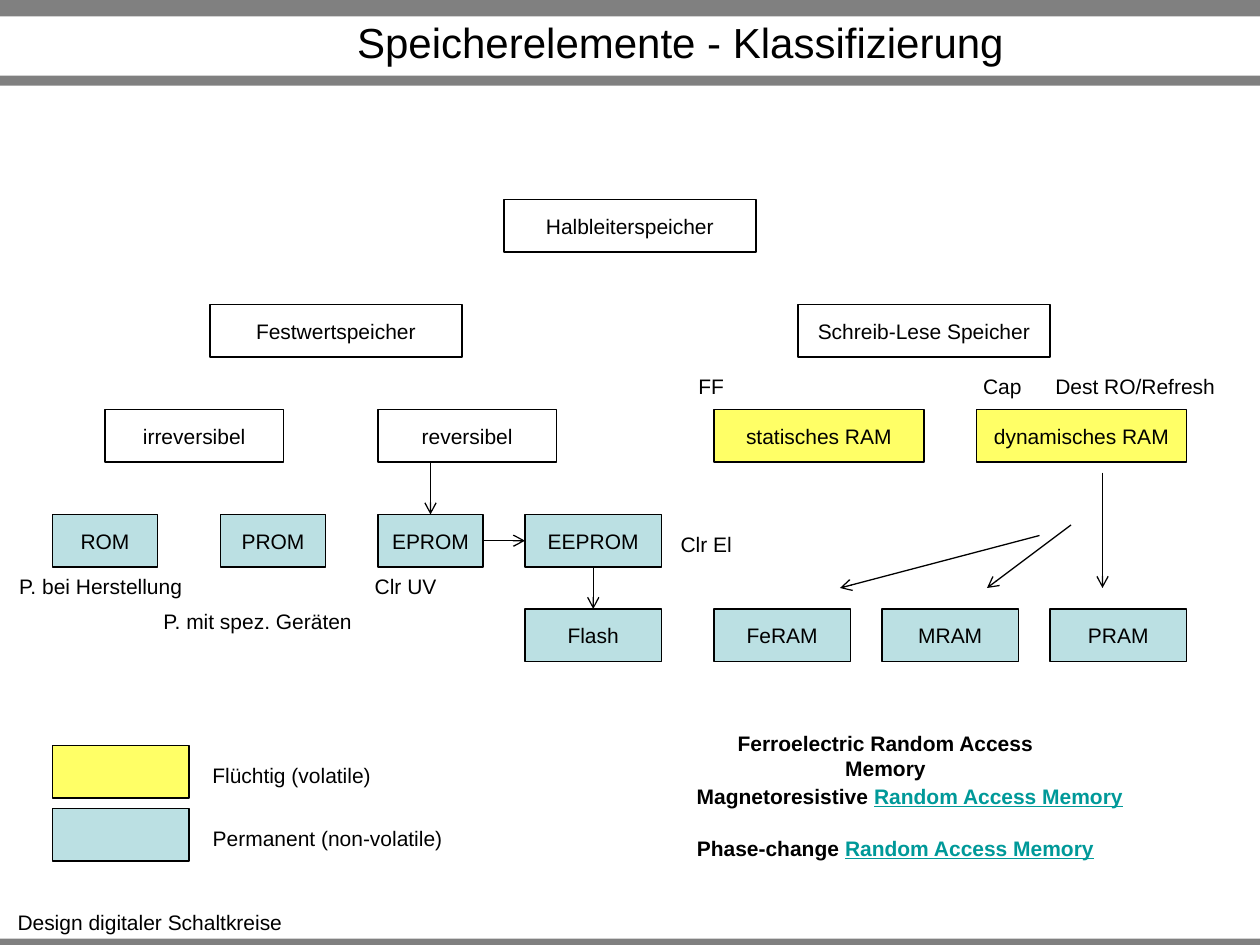
from lxml.etree import SubElement
from pptx import Presentation
from pptx.dml.color import RGBColor
from pptx.enum.shapes import MSO_CONNECTOR, MSO_SHAPE
from pptx.enum.text import MSO_ANCHOR, PP_ALIGN
from pptx.oxml.ns import qn
from pptx.util import Pt

THEME = {
    "font": "Arial", "title": 24, "body": 12, "line": 0.75,
    "black": "000000", "white": "FFFFFF", "bar": "808080", "accent": "009999",
    "volatile": "FFFF66", "permanent": "BBE0E3",
}
SLIDE_W, SLIDE_H = 720, 540
BOX_H, LABEL_H = 30, 21.6

# Content
TITLE = "Speicherelemente - Klassifizierung"
BARS = [(0, 9.36), (43.2, 5.76), (536.4, 5.76)]  # top, height

# Tree rows: top -> (text, left, width, fill)
ROWS = {
    114: [("Halbleiterspeicher", 288, 144, None)],
    174: [("Festwertspeicher", 120, 144, None),
          ("Schreib-Lese Speicher", 456, 144, None)],
    234: [("irreversibel", 60, 102, "white"), ("reversibel", 216, 102, "white"),
          ("statisches RAM", 408, 120, "volatile"),
          ("dynamisches RAM", 558, 120, "volatile")],
    294: [("ROM", 30, 60, "permanent"), ("PROM", 126, 60, "permanent"),
          ("EPROM", 216, 60, "permanent"), ("EEPROM", 300, 78, "permanent")],
    348: [("Flash", 300, 78, "permanent"), ("FeRAM", 408, 78, "permanent"),
          ("MRAM", 504, 78, "permanent"), ("PRAM", 600, 78, "permanent")],
}

# Side of one box to side of another (0 top, 1 left, 2 bottom, 3 right)
LINKS = [("EPROM", 3, "EEPROM", 1), ("EEPROM", 2, "Flash", 0)]
# Start, end, box whose top is reached
FREE_ARROWS = [
    ((246, 264), (246, 294), "EPROM"),
    ((630, 270), (630, 336), None),
    ((612, 300), (564, 336), None),
    ((594, 306), (480, 336), None),
]

# Text, left, top, width
LABELS = [
    ("FF", 391.7, 210, 29.5),
    ("Cap", 554.4, 210, 36.7),
    ("Dest RO/Refresh", 595.4, 210, 106.6),
    ("Clr El", 381.6, 300, 43.9),
    ("Clr UV", 206.6, 324, 50.4),
    ("P. bei Herstellung", 3.6, 324, 108),
    ("P. mit spez. Geräten", 85.7, 344.2, 123.1),
    ("Design digitaler Schaltkreise", 2.2, 516.2, 167),
]
LEGEND = [("Flüchtig (volatile)", "volatile", 105.8),
          ("Permanent (non-volatile)", "permanent", 146.9)]
# Plain part, underlined part, width
GLOSSARY = [("Ferroelectric Random Access Memory", "", 232),
            ("Magnetoresistive ", "Random Access Memory", 259.9),
            ("Phase-change ", "Random Access Memory", 243.4)]


def color(key):
    return RGBColor.from_string(THEME[key])


def write(frame, text, *, size="body", ink="black", bold=False,
          underline=False, wrap=True, anchor=MSO_ANCHOR.MIDDLE):
    """Append a formatted run to the first paragraph of the frame."""
    frame.word_wrap = wrap
    frame.vertical_anchor = anchor
    paragraph = frame.paragraphs[0]
    paragraph.alignment = PP_ALIGN.CENTER
    run = paragraph.add_run()
    run.text = text
    font = run.font
    font.name, font.size = THEME["font"], Pt(THEME[size])
    font.bold, font.underline = bold, underline
    font.color.rgb = color(ink)


def add_box(slide, left, top, width, height, fill=None, outlined=True):
    box = slide.shapes.add_shape(
        MSO_SHAPE.RECTANGLE, Pt(left), Pt(top), Pt(width), Pt(height))
    box.shadow.inherit = False
    if fill:
        box.fill.solid()
        box.fill.fore_color.rgb = color(fill)
    else:
        box.fill.background()
    if outlined:
        box.line.color.rgb = color("black")
        box.line.width = Pt(THEME["line"])
    else:
        box.line.fill.background()
    return box


def add_label(slide, text, left, top, width, **style):
    label = slide.shapes.add_textbox(Pt(left), Pt(top), Pt(width), Pt(LABEL_H))
    write(label.text_frame, text, wrap=False, anchor=MSO_ANCHOR.TOP, **style)
    return label


def add_arrow(slide, start=(0, 0), end=(0, 0)):
    arrow = slide.shapes.add_connector(
        MSO_CONNECTOR.STRAIGHT, *(Pt(value) for value in (*start, *end)))
    arrow.line.color.rgb = color("black")
    arrow.line.width = Pt(THEME["line"])
    SubElement(arrow.line._get_or_add_ln(), qn("a:tailEnd"), type="arrow")
    SubElement(arrow._element.spPr, qn("a:effectLst"))
    return arrow


def main():
    deck = Presentation()
    deck.slide_width, deck.slide_height = Pt(SLIDE_W), Pt(SLIDE_H)
    slide = deck.slides.add_slide(deck.slide_layouts[5])

    # Bars and title
    for top, height in BARS:
        add_box(slide, 0, top, SLIDE_W, height, "bar", outlined=False)
    title = slide.shapes.title
    title.left, title.top = Pt(93.6), Pt(10.08)
    title.width, title.height = Pt(590.4), Pt(27.36)
    write(title.text_frame, TITLE, size="title")

    # Classification tree
    boxes = {}
    for top, row in ROWS.items():
        for text, left, width, fill in row:
            boxes[text] = add_box(slide, left, top, width, BOX_H, fill)
            write(boxes[text].text_frame, text)

    # Arrows
    for source, source_side, target, target_side in LINKS:
        arrow = add_arrow(slide)
        arrow.begin_connect(boxes[source], source_side)
        arrow.end_connect(boxes[target], target_side)
    for start, end, target in FREE_ARROWS:
        arrow = add_arrow(slide, start, end)
        if target:
            arrow.end_connect(boxes[target], 0)

    # Notes beside the boxes and footer
    for label in LABELS:
        add_label(slide, *label)

    # Legend
    for index, (text, fill, width) in enumerate(LEGEND):
        top = 426 + 36 * index
        add_box(slide, 30, top, 78, BOX_H, fill)
        add_label(slide, text, 113.8, top + 6, width)

    # Glossary
    for index, (term, linked, width) in enumerate(GLOSSARY):
        label = add_label(slide, term, 390, 414 + 30 * index, width, bold=True)
        if linked:
            write(label.text_frame, linked, ink="accent", bold=True,
                  underline=True, wrap=False, anchor=MSO_ANCHOR.TOP)

    deck.save("out.pptx")


if __name__ == "__main__":
    main()
